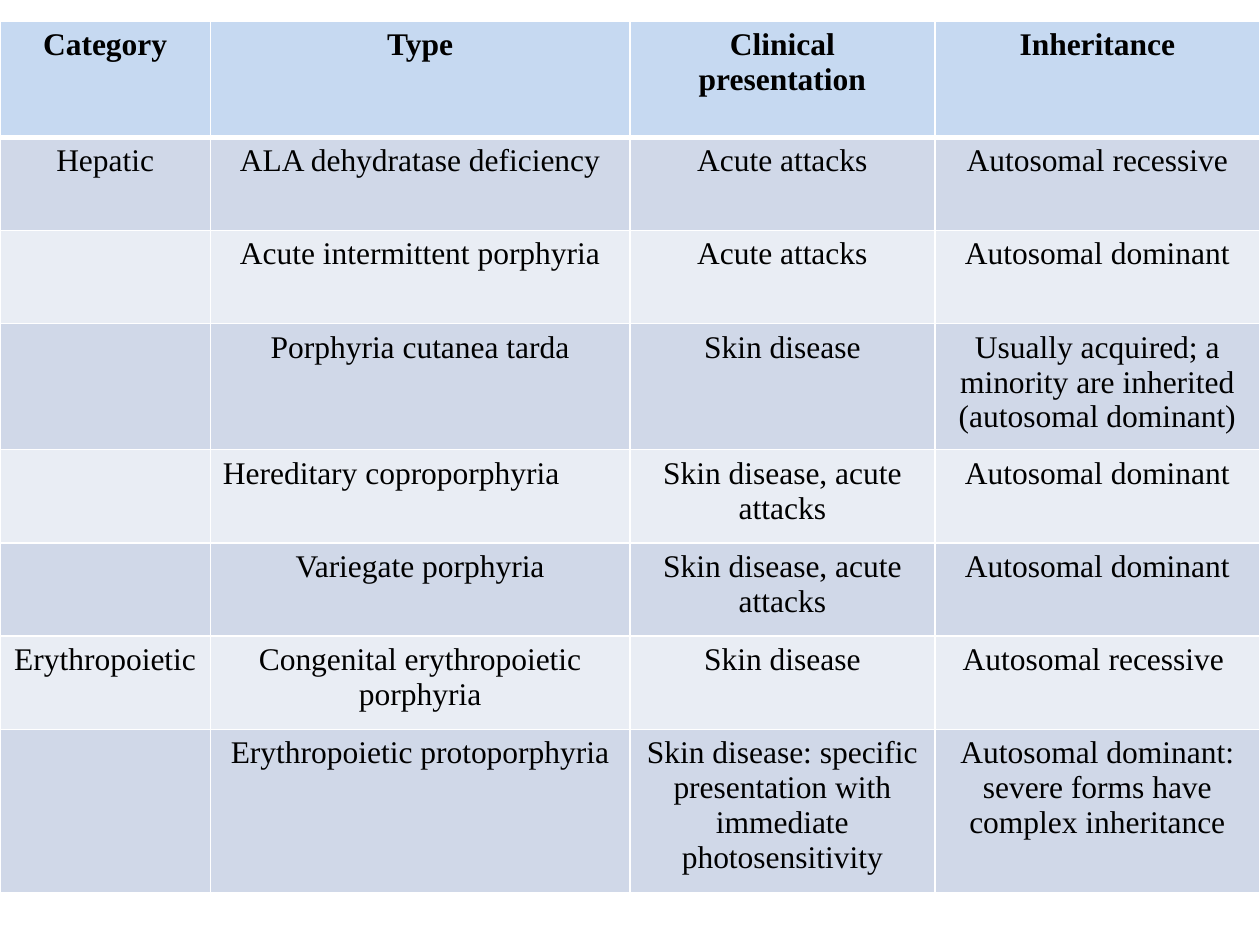
from lxml import etree
from pptx import Presentation
from pptx.dml.color import RGBColor
from pptx.enum.text import PP_ALIGN
from pptx.oxml.ns import qn
from pptx.util import Inches, Pt

LEFT, CENTER = PP_ALIGN.LEFT, PP_ALIGN.CENTER
COLORS = {"head": "C6D9F1", "odd": "D0D8E8", "even": "E9EDF4",
          "rule": "FFFFFF", "text": "000000"}
FONT = {"name": "Times New Roman", "size": Pt(18)}
WIDTHS = [1.67, 3.33, 2.42, 2.58]
HEIGHTS = [0.92, 0.74, 0.74, 1, 0.74, 0.74, 0.74, 1.3]
ROWS = [
    ["Category", "Type", "Clinical presentation", "Inheritance"],
    ["Hepatic", "ALA dehydratase deficiency", "Acute attacks",
     "Autosomal recessive"],
    ["", "Acute intermittent porphyria", "Acute attacks",
     "Autosomal dominant"],
    ["", "Porphyria cutanea tarda", "Skin disease",
     "Usually acquired; a minority are inherited (autosomal dominant)"],
    ["", "Hereditary coproporphyria", "Skin disease, acute attacks",
     "Autosomal dominant"],
    ["", "Variegate porphyria", "Skin disease, acute attacks",
     "Autosomal dominant"],
    ["Erythropoietic", "Congenital erythropoietic porphyria", "Skin disease",
     "Autosomal recessive "],
    ["", "Erythropoietic protoporphyria",
     "Skin disease: specific presentation with immediate photosensitivity",
     "Autosomal dominant: severe forms have complex inheritance"],
]
LEFT_CELL = (4, 1)


class Deck:
    """Holds the style and the current slide."""

    def __init__(self, slide, colors, font):
        self.slide, self.colors, self.font = slide, colors, font

    def color(self, name):
        return RGBColor.from_string(self.colors[name])

    def table(self, rows, left, top, widths, heights):
        frame = self.slide.shapes.add_table(
            len(rows), len(widths), Inches(left), Inches(top),
            Inches(sum(widths)), Inches(sum(heights)))
        grid = frame.table
        for col, width in zip(grid.columns, widths):
            col.width = Inches(width)
        for r, (row, height) in enumerate(zip(rows, heights)):
            grid.rows[r].height = Inches(height)
            for c, text in enumerate(row):
                self.cell(grid.cell(r, c), text, r, c)

    def cell(self, cell, text, r, c):
        self.border(cell, top=3 if r == 1 else 1, base=3 if r == 0 else 1)
        fill = "head" if r == 0 else "odd" if r % 2 else "even"
        cell.fill.solid()
        cell.fill.fore_color.rgb = self.color(fill)
        cell.text = text
        para = cell.text_frame.paragraphs[0]
        para.alignment = LEFT if (r, c) == LEFT_CELL else CENTER
        for key, value in {**self.font, "bold": r == 0}.items():
            setattr(para.font, key, value)
        para.font.color.rgb = self.color("text")

    def border(self, cell, top, base):
        """Rule all four sides; widths are in points."""
        props = cell._tc.get_or_add_tcPr()
        for side, width in {"L": 1, "R": 1, "T": top, "B": base}.items():
            line = etree.SubElement(props, qn(f"a:ln{side}"), w=str(Pt(width)))
            fill = etree.SubElement(line, qn("a:solidFill"))
            etree.SubElement(fill, qn("a:srgbClr"), val=self.colors["rule"])


def main():
    prs = Presentation()
    prs.slide_width, prs.slide_height = Inches(10), Inches(7.5)
    deck = Deck(prs.slides.add_slide(prs.slide_layouts[6]), COLORS, FONT)
    deck.table(ROWS, 0, 0.17, WIDTHS, HEIGHTS)
    prs.save("out.pptx")


if __name__ == "__main__":
    main()
